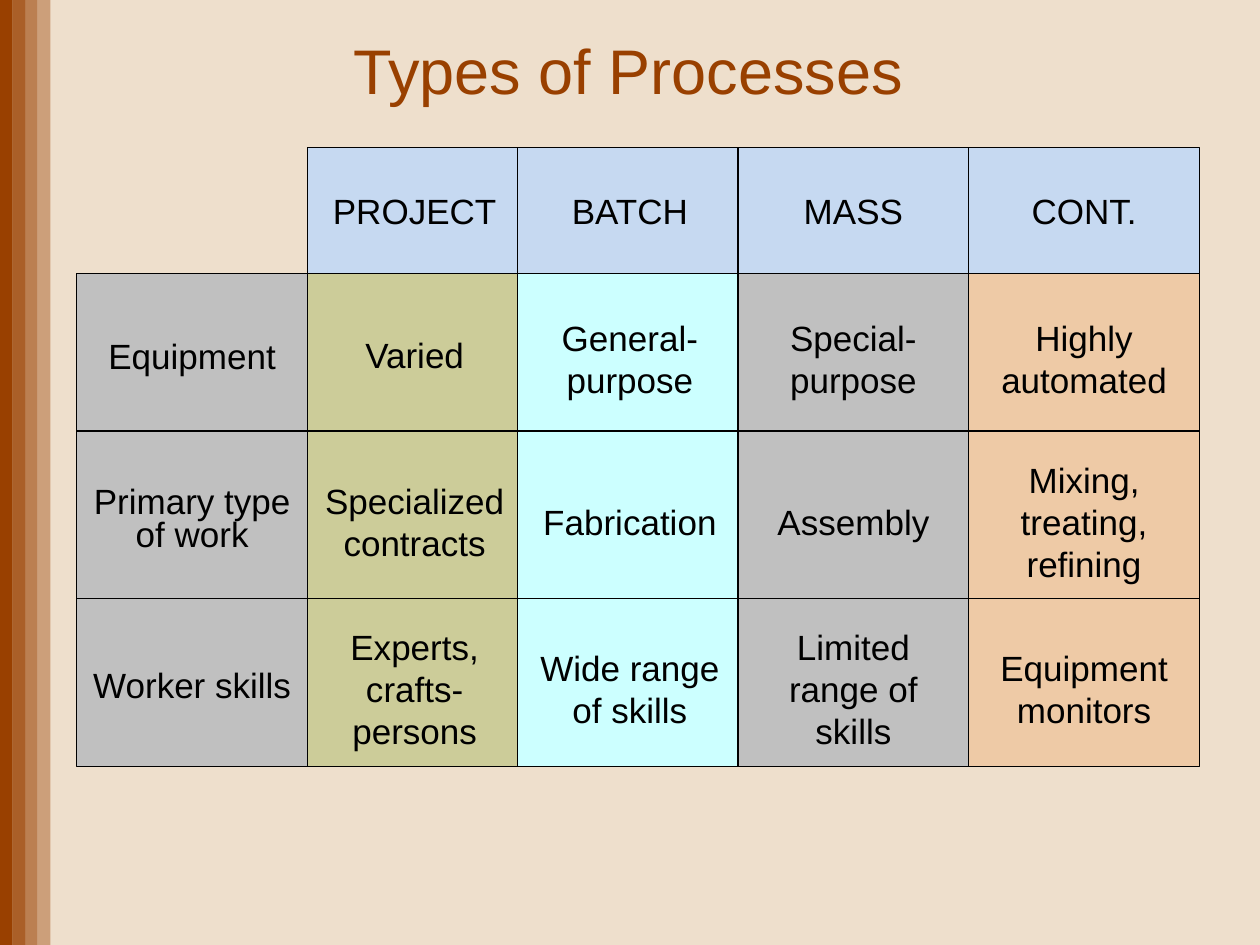
from lxml import etree
from pptx import Presentation
from pptx import util as u
from pptx.dml.color import RGBColor
from pptx.enum import shapes, text
from pptx.oxml.ns import qn

FONT = "Arial"
BROWN = "994000"
GREY = "C0C0C0"
HEADER_FILL = "C6D9F1"
HEADER_INSETS = (0.25, 0.13, 0.25, 0.13)
CELL_INSETS = (0.25, 0.38, 0.25, 0.13)

# left, width and body fill of each column
COLUMNS = [
    (1.55, 4.65, GREY),
    (6.2, 4.32, "CCCC99"),
    (10.44, 4.52, "CCFFFF"),
    (14.88, 4.65, GREY),
    (19.53, 4.65, "EECAA6"),
]
ROW_HEIGHTS = [2.54, 3.18, 3.38, 3.38]
TABLE_TOP = 2.97
ROWS = [
    ["", "PROJECT", "BATCH", "MASS", "CONT."],
    ["Equipment", "Varied", "General-purpose", "Special-purpose", "Highly automated"],
    ["Primary type of work", "Specialized contracts", "Fabrication", "Assembly",
     "Mixing, treating, refining"],
    ["Worker skills", "Experts, crafts-persons", "Wide range of skills",
     "Limited range of skills", "Equipment monitors"],
]
TIGHT_LABELS = {"Varied", "Primary type of work", "Worker skills"}


def color(value):
    """Turn a hex string into a colour."""
    return RGBColor.from_string(value)


def write_text(shape, wording, size, font_color, insets):
    """Put centred, formatted text into a shape."""
    frame = shape.text_frame
    frame.text = wording
    frame.word_wrap = True
    frame.auto_size = text.MSO_AUTO_SIZE.NONE
    frame.vertical_anchor = text.MSO_ANCHOR.MIDDLE
    (frame.margin_left, frame.margin_top,
     frame.margin_right, frame.margin_bottom) = map(u.Cm, insets)
    paragraph = frame.paragraphs[0]
    paragraph.alignment = text.PP_ALIGN.CENTER
    font = paragraph.runs[0].font
    font.name = FONT
    font.size = u.Pt(size)
    font.color.rgb = color(font_color)
    return paragraph


def add_rectangle(slide, left, top, width, height, fill):
    """Add a filled rectangle without shadow."""
    shape = slide.shapes.add_shape(
        shapes.MSO_SHAPE.RECTANGLE, *map(u.Cm, (left, top, width, height)))
    shape.shadow.inherit = False
    shape.fill.solid()
    shape.fill.fore_color.rgb = color(fill)
    return shape


def add_side_bars(slide):
    """Add the four fading stripes along the left edge."""
    width = 0.254
    for index, opacity in enumerate((100, 80, 60, 40)):
        bar = add_rectangle(slide, index * width, 0, width, 19.05, BROWN)
        bar.line.fill.background()
        if opacity < 100:
            fill_color = bar.fill._xPr.find(qn("a:solidFill"))[0]
            etree.SubElement(fill_color, qn("a:alpha"), val=str(opacity * 1000))


def add_title(slide, wording):
    """Place and format the title."""
    title = slide.shapes.title
    title.left, title.top, title.width, title.height = map(
        u.Cm, (4.19, 0.13, 16.94, 2.54))
    write_text(title, wording, 36, BROWN, HEADER_INSETS)


def add_cell(slide, wording, box, fill, insets):
    """Add one outlined cell of the grid."""
    cell = add_rectangle(slide, *box, fill)
    cell.line.color.rgb = color("000000")
    cell.line.width = u.Pt(0.75)
    paragraph = write_text(cell, wording, 20, "000000", insets)
    if wording in TIGHT_LABELS:
        paragraph.line_spacing = 0.8


def add_grid(slide):
    """Add the process grid, leaving its corner empty."""
    for row, wordings in enumerate(ROWS):
        top = TABLE_TOP + sum(ROW_HEIGHTS[:row])
        for (left, width, fill), wording in zip(COLUMNS, wordings):
            if not wording:
                continue
            box = (left, top, width, ROW_HEIGHTS[row])
            if row == 0:
                add_cell(slide, wording, box, HEADER_FILL, HEADER_INSETS)
            elif wording == "Equipment":
                add_cell(slide, wording, box, fill, (0, 0.13, 0, 0))
            else:
                add_cell(slide, wording, box, fill, CELL_INSETS)


def main():
    """Build and save the slide."""
    presentation = Presentation()
    presentation.slide_width = u.Cm(25.4)
    presentation.slide_height = u.Cm(19.05)
    slide = presentation.slides.add_slide(presentation.slide_layouts[5])
    slide.background.fill.solid()
    slide.background.fill.fore_color.rgb = color("EEDFCC")
    add_side_bars(slide)
    add_title(slide, "Types of Processes")
    add_grid(slide)
    presentation.save("out.pptx")


if __name__ == "__main__":
    main()
